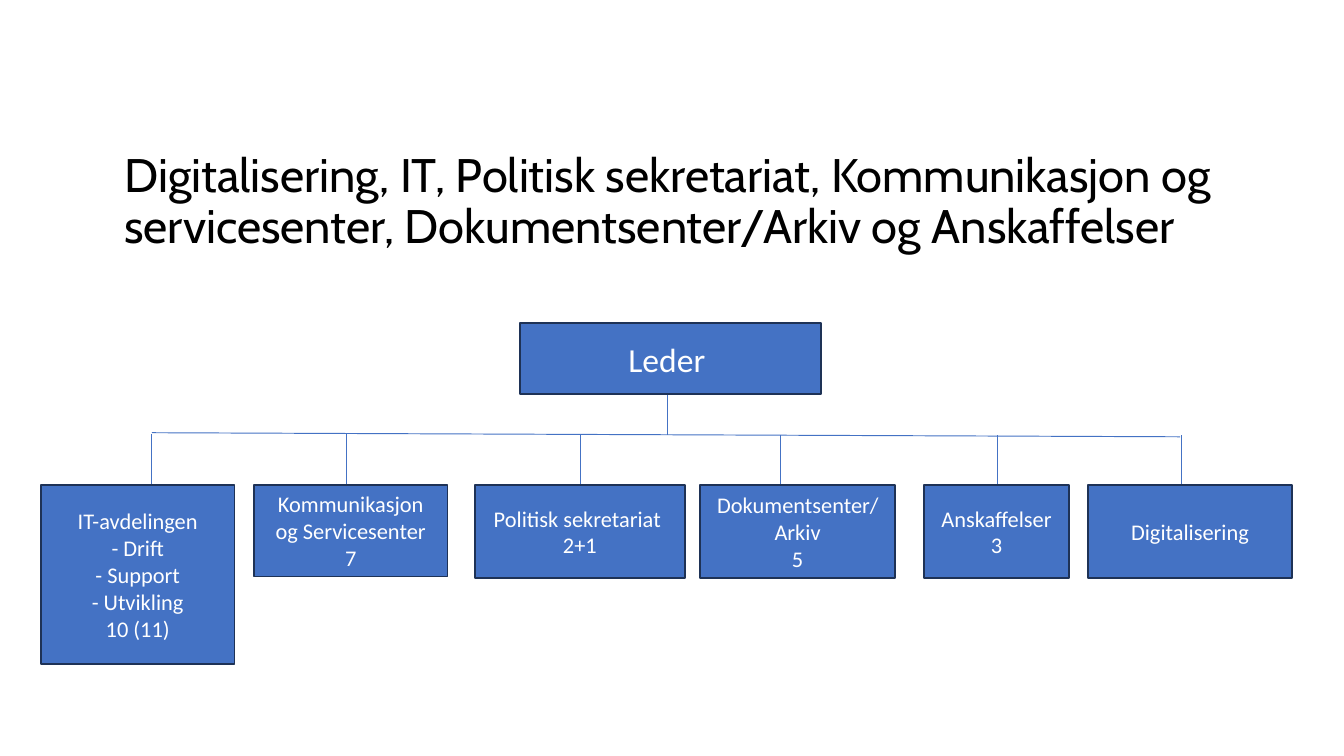
import lxml.etree
import pptx
import pptx.dml.color
import pptx.enum.shapes
import pptx.enum.text
import pptx.oxml.ns
import pptx.util

COLORS = {"box": "4472C4", "border": "1E3256", "link": "4472C4",
          "title": "000000", "label": "FFFFFF"}

deck = pptx.Presentation()
deck.slide_width = pptx.util.Inches(10)
deck.slide_height = deck.slide_width * 9 // 16
COLUMN = deck.slide_width / 100  # grid of 100 columns by 56.25 rows
ROW = deck.slide_height / 56.25

slide = deck.slides.add_slide(deck.slide_layouts[5])


def grid(*cells):
    """Turn alternating column and row counts into lengths."""
    return [round(cell * (ROW if i % 2 else COLUMN)) for i, cell in enumerate(cells)]


def write(shape, text, size, font="Calibri", color="label",
          align=pptx.enum.text.PP_ALIGN.CENTER, spacing=1.0):
    frame = shape.text_frame
    frame.text = text
    frame.word_wrap = True
    frame.auto_size = pptx.enum.text.MSO_AUTO_SIZE.NONE
    frame.vertical_anchor = pptx.enum.text.MSO_ANCHOR.MIDDLE
    for paragraph in frame.paragraphs:
        paragraph.alignment = align
        paragraph.line_spacing = spacing
        paragraph.font.size = pptx.util.Pt(size)
        paragraph.font.name = font
        paragraph.font.color.rgb = pptx.dml.color.RGBColor.from_string(COLORS[color])


title = slide.shapes.title
title.left, title.top, title.width, title.height = grid(8.25, 11.55, 83.5, 7.1)
write(title, "Digitalisering, IT, Politisk sekretariat, Kommunikasjon og "
      "servicesenter, Dokumentsenter/Arkiv og Anskaffelser",
      size=25.2, font="Cabin", color="title",
      align=pptx.enum.text.PP_ALIGN.LEFT, spacing=0.9)

# Units: left, width, height, column of the branch line, text
UNIT_TOP = 36.1
units = [
    (3.05, 14.4, 13.3, 11.3, "IT-avdelingen\n- Drift\n- Support\n- Utvikling\n10 (11)"),
    (18.9, 14.4, 6.8, 25.8, "Kommunikasjon og Servicesenter\n7"),
    (35.35, 15.6, 6.9, 43.2, "Politisk sekretariat \n2+1"),
    (52.1, 14.5, 6.9, 58.1, "Dokumentsenter/Arkiv\n5"),
    (68.75, 10.8, 6.9, 74.2, "Anskaffelser\n3"),
    (80.95, 15.2, 6.9, 87.9, "Digitalisering"),
]

boxes = [(38.7, 24.05, 22.4, 5.3, "Leder ", 18)]
links = [(49.7, 29.4, 49.7, 32.4), (11.3, 32.2, 87.8, 32.5)]
for left, width, height, branch, text in units:
    boxes.append((left, UNIT_TOP, width, height, text, 12))
    links.append((branch, 32.3 if branch < 40 else 32.4, branch, UNIT_TOP))

for ends in links:
    link = slide.shapes.add_connector(
        pptx.enum.shapes.MSO_CONNECTOR.STRAIGHT, *grid(*ends))
    link.line.color.rgb = pptx.dml.color.RGBColor.from_string(COLORS["link"])
    link.line.width = pptx.util.Pt(0.5)
    lxml.etree.SubElement(link._element.spPr, pptx.oxml.ns.qn("a:effectLst"))

for left, top, width, height, text, size in boxes:
    box = slide.shapes.add_shape(
        pptx.enum.shapes.MSO_SHAPE.RECTANGLE, *grid(left, top, width, height))
    box.shadow.inherit = False
    box.fill.solid()
    box.fill.fore_color.rgb = pptx.dml.color.RGBColor.from_string(COLORS["box"])
    box.line.color.rgb = pptx.dml.color.RGBColor.from_string(COLORS["border"])
    box.line.width = pptx.util.Pt(1)
    write(box, text, size=size)

deck.save("out.pptx")
